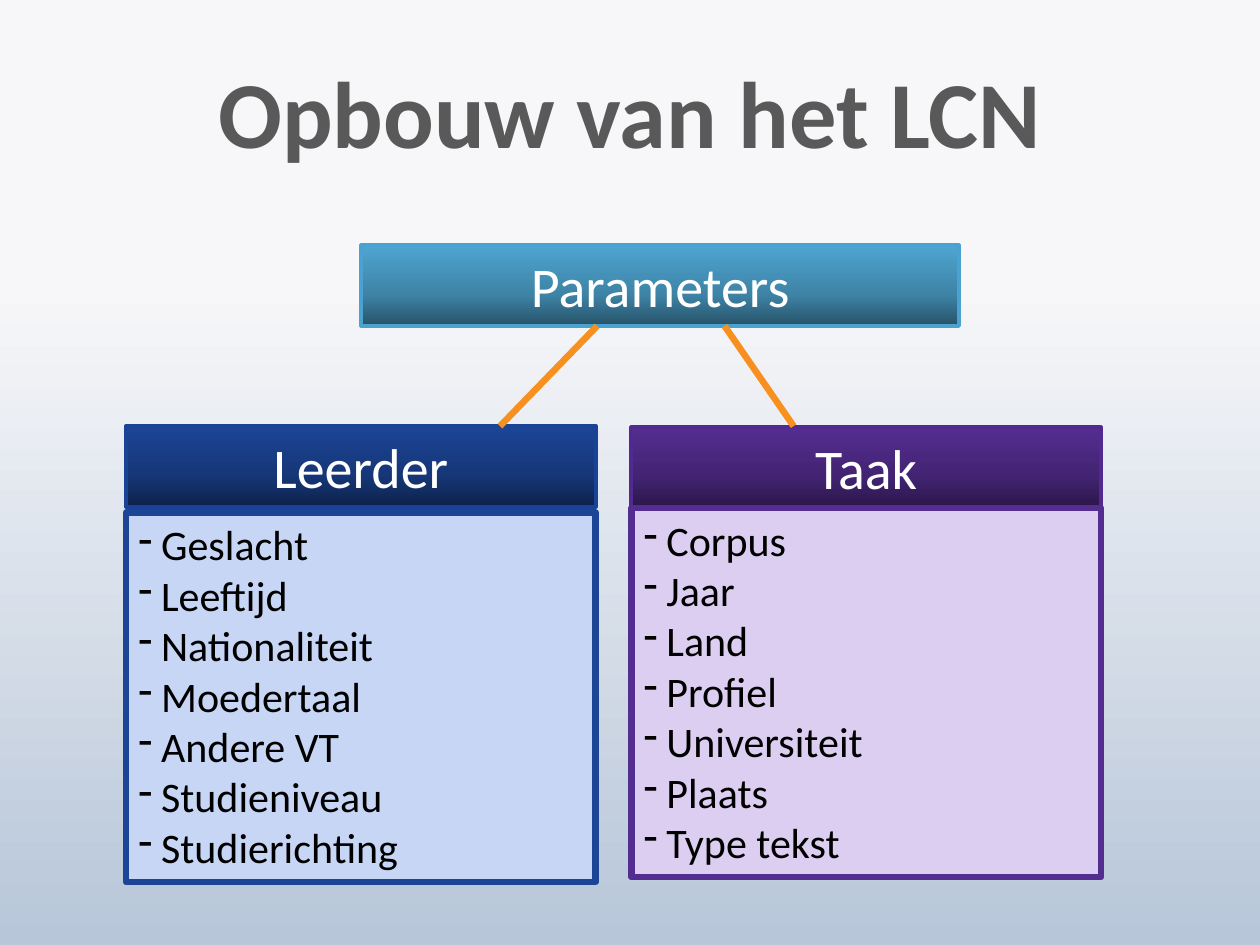
import copy

import pptx
import pptx.dml.color
import pptx.enum.shapes
import pptx.enum.text
import pptx.oxml.ns
import pptx.util
from lxml import etree

Pt = pptx.util.Pt
RGB = pptx.dml.color.RGBColor
qn = pptx.oxml.ns.qn
PP_ALIGN = pptx.enum.text.PP_ALIGN
ANCHOR = pptx.enum.text.MSO_ANCHOR
RECTANGLE = pptx.enum.shapes.MSO_SHAPE.RECTANGLE
STRAIGHT = pptx.enum.shapes.MSO_CONNECTOR.STRAIGHT

FONT = "Calibri"
WHITE = RGB(0xFF, 0xFF, 0xFF)
BLACK = RGB(0, 0, 0)
GREY = RGB(0x59, 0x59, 0x59)
ORANGE = RGB(0xF7, 0x90, 0x1E)
TEAL_LINE = RGB(0x49, 0xA2, 0xD0)
BLUE_LINE = RGB(0x18, 0x43, 0x96)
PURPLE_LINE = RGB(0x52, 0x2A, 0x8F)
BLUE = RGB(0x1C, 0x45, 0x96)
PURPLE = RGB(0x54, 0x2D, 0x90)
PALE_BLUE = RGB(0xC7, 0xD6, 0xF5)
PALE_PURPLE = RGB(0xDB, 0xCE, 0xF0)
BACKDROP = [(0.3, RGB(0xF7, 0xF7, 0xF9)), (1, RGB(0xB7, 0xC6, 0xD9))]
TEAL_SHADES = [(0, RGB(0x4E, 0xA5, 0xD1)), (0.6, RGB(0x3E, 0x84, 0xA7)),
               (1, RGB(0x27, 0x52, 0x68))]
BLUE_SHADES = [(0, BLUE), (0.6, RGB(0x16, 0x37, 0x78)),
               (1, RGB(0x0E, 0x22, 0x4B))]
PURPLE_SHADES = [(0, PURPLE), (0.6, RGB(0x43, 0x24, 0x73)),
                 (1, RGB(0x2A, 0x16, 0x48))]

LEARNER_LEFT, TASK_LEFT = 72, 360.75
COLUMN_WIDTH = 268.5
HEADER_HEIGHT = 46
LIST_HEIGHT = 211
BULLET_INDENT = 13
LEARNER_ITEMS = ["Geslacht", "Leeftijd", "Nationaliteit", "Moedertaal",
                 "Andere VT", "Studieniveau", "Studierichting"]
TASK_ITEMS = ["Corpus", "Jaar", "Land", "Profiel", "Universiteit", "Plaats",
              "Type tekst"]


def set_gradient(fill, element, stops):
    fill.gradient()
    fill.gradient_angle = 270
    gs_list = element.find(".//" + qn("a:gsLst"))
    while len(gs_list) < len(stops):
        gs_list.append(copy.deepcopy(gs_list[-1]))
    for stop, (position, color) in zip(fill.gradient_stops, stops):
        stop.position = position
        stop.color.rgb = color


def style_paragraph(p, size, color, align, bold=False):
    p.alignment = align
    p.font.name = FONT
    p.font.size = Pt(size)
    p.font.bold = bold
    p.font.color.rgb = color


def add_title(s, text):
    sp = s.shapes.add_textbox(Pt(72), Pt(18), Pt(576), Pt(99.36))
    tf = sp.text_frame
    tf.word_wrap = True
    tf.vertical_anchor = ANCHOR.MIDDLE
    p = tf.paragraphs[0]
    p.text = text
    p.line_spacing = Pt(56)
    style_paragraph(p, 54, GREY, PP_ALIGN.CENTER, True)


def add_box(s, left, top, width, height, line_color, line_width):
    sp = s.shapes.add_shape(RECTANGLE, Pt(left), Pt(top), Pt(width), Pt(height))
    sp.shadow.inherit = False
    sp.line.color.rgb = line_color
    sp.line.width = Pt(line_width)
    sp.text_frame.word_wrap = True
    sp.text_frame.vertical_anchor = ANCHOR.TOP
    return sp


def add_header(s, left, top, width, text, shades, line_color):
    sp = add_box(s, left, top, width, HEADER_HEIGHT, line_color, 2.25)
    set_gradient(sp.fill, sp._element, shades)
    p = sp.text_frame.paragraphs[0]
    p.text = text
    style_paragraph(p, 32, WHITE, PP_ALIGN.CENTER)


def add_list(s, left, top, items, color, line_color):
    sp = add_box(s, left, top, COLUMN_WIDTH, LIST_HEIGHT, line_color, 3.75)
    sp.fill.solid()
    sp.fill.fore_color.rgb = color
    tf = sp.text_frame
    tf.text = "\n".join(items)
    for p in tf.paragraphs:
        props = p._p.get_or_add_pPr()
        props.set("marL", str(Pt(BULLET_INDENT)))
        props.set("indent", str(-Pt(BULLET_INDENT)))
        etree.SubElement(props, qn("a:buChar")).set("char", "-")
        style_paragraph(p, 24, BLACK, PP_ALIGN.LEFT)


def add_branch(s, x1, y1, x2, y2):
    line = s.shapes.add_connector(STRAIGHT, Pt(x1), Pt(y1), Pt(x2), Pt(y2))
    line.line.color.rgb = ORANGE
    line.line.width = Pt(3.75)
    etree.SubElement(line._element.spPr, qn("a:effectLst"))


def main():
    prs = pptx.Presentation()
    prs.slide_width, prs.slide_height = Pt(720), Pt(540)
    s = prs.slides.add_slide(prs.slide_layouts[6])
    set_gradient(s.background.fill, s._element, BACKDROP)

    add_title(s, "Opbouw van het LCN")
    add_header(s, 206.5, 140.25, 341.5, "Parameters", TEAL_SHADES, TEAL_LINE)
    add_header(s, LEARNER_LEFT, 243.5, COLUMN_WIDTH, "Leerder",
               BLUE_SHADES, BLUE_LINE)
    add_header(s, TASK_LEFT, 244.25, COLUMN_WIDTH, "Taak",
               PURPLE_SHADES, PURPLE_LINE)
    add_branch(s, 341.25, 186.25, 285.75, 243.5)
    add_branch(s, 414, 186.25, 453.5, 243.5)
    add_list(s, LEARNER_LEFT, 293, LEARNER_ITEMS, PALE_BLUE, BLUE)
    add_list(s, TASK_LEFT, 290.25, TASK_ITEMS, PALE_PURPLE, PURPLE)

    prs.save("out.pptx")


if __name__ == "__main__":
    main()
